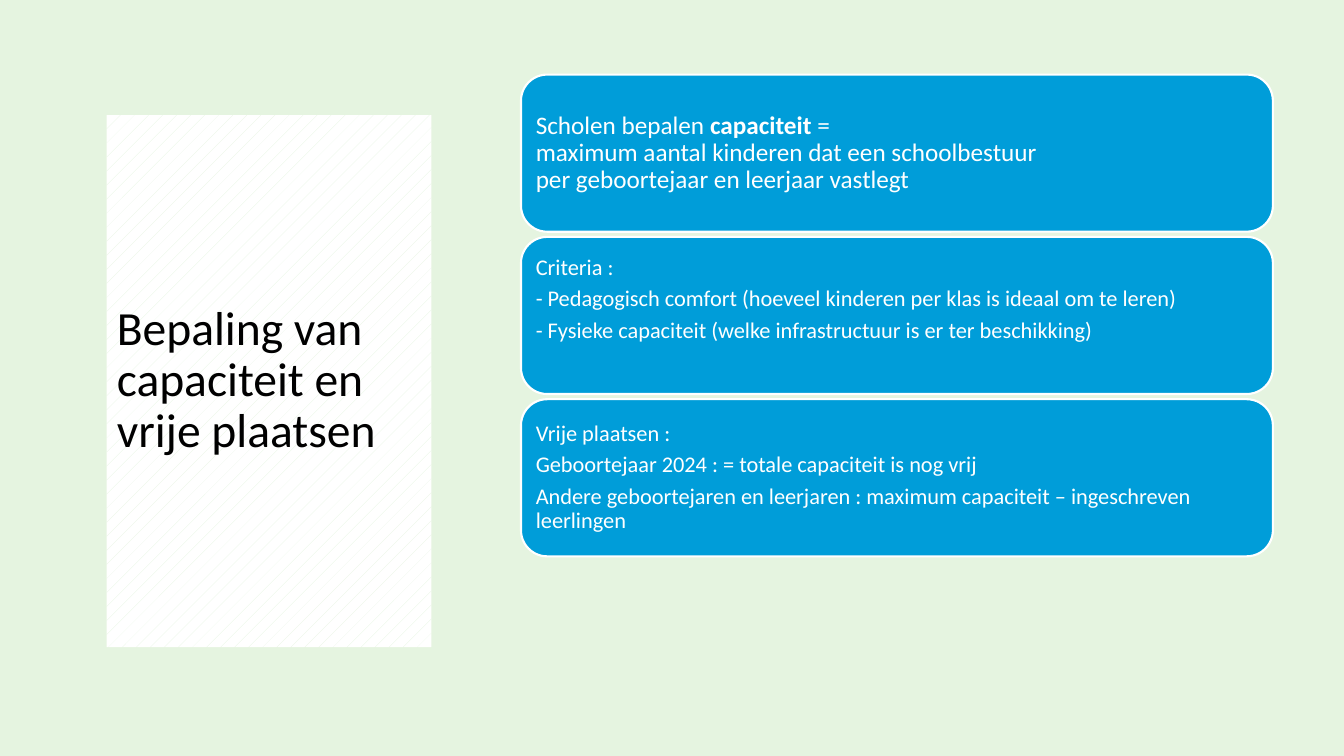
"""Build the slide on determining capacity and free places in schools."""
from dataclasses import dataclass

from pptx import Presentation
from pptx.dml.color import RGBColor
from pptx.enum.dml import MSO_PATTERN
from pptx.enum.shapes import MSO_SHAPE
from pptx.enum.text import MSO_ANCHOR, MSO_AUTO_SIZE, PP_ALIGN
from pptx.slide import Slide
from pptx.util import Cm, Pt


@dataclass(frozen=True)
class Theme:
    font: str = "Calibri"
    background: RGBColor = RGBColor(0xE5, 0xF4, 0xE0)
    card: RGBColor = RGBColor(0x00, 0x9D, 0xD9)
    white: RGBColor = RGBColor(0xFF, 0xFF, 0xFF)
    black: RGBColor = RGBColor(0x00, 0x00, 0x00)
    title_size: int = 34
    definition_size: int = 18
    detail_size: int = 16
    line_spacing: float = 0.9
    paragraph_gap: float = 5.3


@dataclass(frozen=True)
class Card:
    paragraphs: tuple[str, ...]
    size: int
    bottom_inset: float = 0.18


THEME = Theme()
BOLD_MARK = "*"
CARD_LEFT, CARD_TOP, CARD_WIDTH, CARD_HEIGHT = 13.13, 1.88, 18.95, 3.96
CARD_PITCH = 4.09
CARD_INSET = 0.18

CARDS = (
    Card(
        (
            "Scholen bepalen *capaciteit* =\n"
            "maximum aantal kinderen dat een schoolbestuur\n"
            "per geboortejaar en leerjaar vastlegt",
        ),
        THEME.definition_size,
    ),
    Card(
        (
            "Criteria :",
            "- Pedagogisch comfort (hoeveel kinderen per klas is ideaal om te leren)",
            "- Fysieke capaciteit (welke infrastructuur is er ter beschikking)",
        ),
        THEME.detail_size,
        bottom_inset=0.99,
    ),
    Card(
        (
            "Vrije plaatsen :",
            "Geboortejaar 2024 : = totale capaciteit is nog vrij",
            "Andere geboortejaren en leerjaren : maximum capaciteit – ingeschreven leerlingen",
        ),
        THEME.detail_size,
    ),
)


def format_run(run, size: int, color: RGBColor, bold: bool = False) -> None:
    """Apply the theme font to one run."""
    run.font.name = THEME.font
    run.font.size = Pt(size)
    run.font.bold = bold
    run.font.color.rgb = color


def write_paragraph(paragraph, text: str, size: int) -> None:
    """Write lines of text, with marked words in bold."""
    paragraph.alignment = PP_ALIGN.LEFT
    paragraph.line_spacing = THEME.line_spacing
    for row, line in enumerate(text.split("\n")):
        if row:
            paragraph.add_line_break()
        for position, words in enumerate(line.split(BOLD_MARK)):
            run = paragraph.add_run()
            run.text = words
            format_run(run, size, THEME.white, bold=position % 2 == 1)


def draw_title(slide: Slide, text: str) -> None:
    """Place the title on its patterned panel."""
    title = slide.shapes.title
    title.left, title.top, title.width, title.height = Cm(2.69), Cm(2.9), Cm(8.18), Cm(13.41)
    title.fill.patterned()
    title.fill.pattern = MSO_PATTERN.PERCENT_5
    title.fill.fore_color.rgb = THEME.background
    title.fill.back_color.rgb = THEME.white
    frame = title.text_frame
    frame.text = text
    frame.word_wrap = True
    frame.auto_size = MSO_AUTO_SIZE.NONE
    frame.vertical_anchor = MSO_ANCHOR.MIDDLE
    heading = frame.paragraphs[0]
    heading.alignment = PP_ALIGN.LEFT
    heading.line_spacing = THEME.line_spacing
    format_run(heading.runs[0], THEME.title_size, THEME.black)


def draw_card(slide: Slide, card: Card, top: float) -> None:
    """Draw one rounded card with its paragraphs."""
    panel = slide.shapes.add_shape(
        MSO_SHAPE.ROUNDED_RECTANGLE, Cm(CARD_LEFT), Cm(top), Cm(CARD_WIDTH), Cm(CARD_HEIGHT)
    )
    panel.shadow.inherit = False
    panel.fill.solid()
    panel.fill.fore_color.rgb = THEME.card
    panel.line.color.rgb = THEME.white
    panel.line.width = Pt(1.5)
    frame = panel.text_frame
    frame.word_wrap = True
    frame.vertical_anchor = MSO_ANCHOR.MIDDLE
    frame.margin_left = frame.margin_right = frame.margin_top = Cm(CARD_INSET)
    frame.margin_bottom = Cm(card.bottom_inset)
    for index, text in enumerate(card.paragraphs):
        paragraph = frame.add_paragraph() if index else frame.paragraphs[0]
        if index:
            paragraph.space_before = Pt(THEME.paragraph_gap)
        write_paragraph(paragraph, text, card.size)


def main() -> None:
    """Build and save the presentation."""
    presentation = Presentation()
    presentation.slide_width, presentation.slide_height = Cm(33.87), Cm(19.05)
    slide = presentation.slides.add_slide(presentation.slide_layouts.get_by_name("Title Only"))
    slide.background.fill.solid()
    slide.background.fill.fore_color.rgb = THEME.background
    draw_title(slide, "Bepaling van capaciteit en vrije plaatsen")
    for index, card in enumerate(CARDS):
        draw_card(slide, card, CARD_TOP + index * CARD_PITCH)
    presentation.save("out.pptx")


if __name__ == "__main__":
    main()
